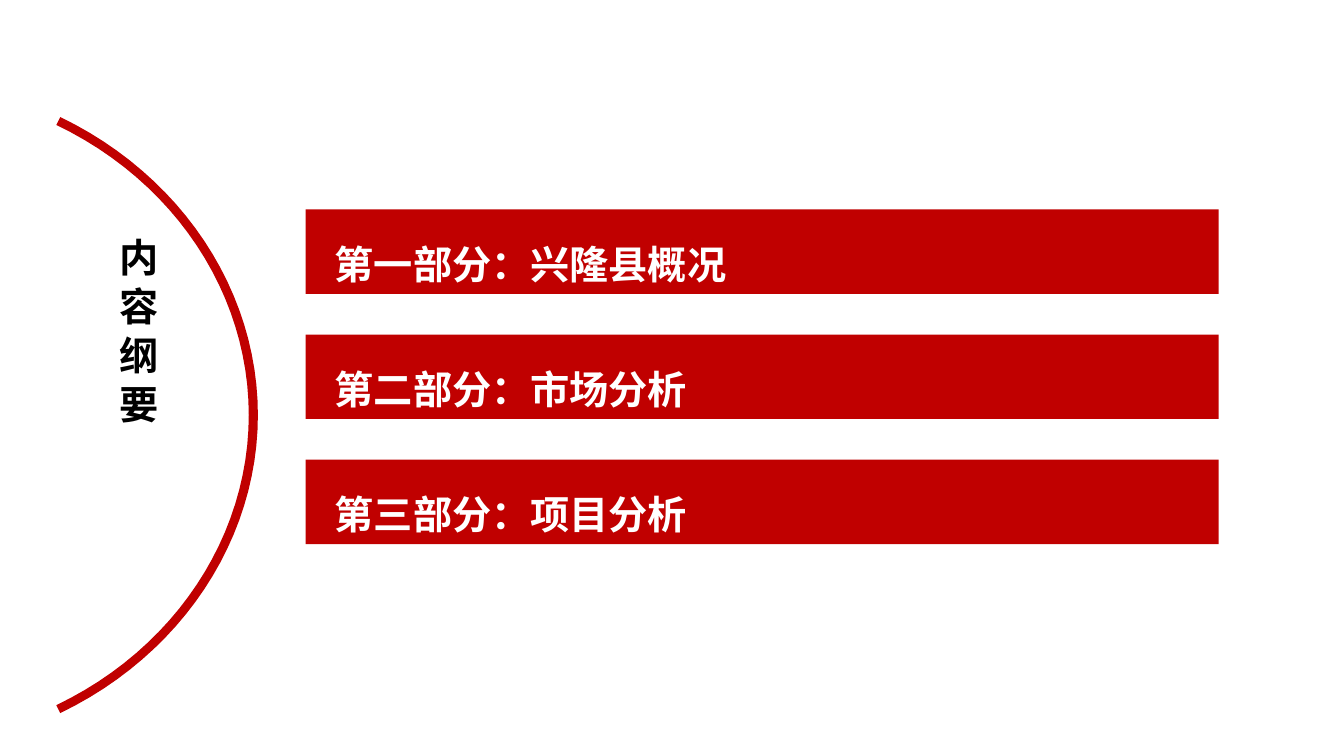
from dataclasses import dataclass

from lxml.etree import SubElement
from pptx import Presentation
from pptx.dml.color import RGBColor
from pptx.enum.shapes import MSO_SHAPE
from pptx.enum.text import MSO_ANCHOR, MSO_AUTO_SIZE, PP_ALIGN
from pptx.oxml.ns import qn
from pptx.util import Cm, Pt

COLOURS = {"red": "C00000", "white": "FFFFFF", "black": "000000"}
FONT = "Noto Sans CJK SC"

BAR_LEFT, BAR_TOP, BAR_WIDTH, BAR_HEIGHT = 7.7, 5.28, 23.01, 2.13
BAR_PITCH = 3.15

ARC_MIDDLE = 10.46
CURVE_STEPS = 24
# Control points of the upper half of each edge, in centimetres
INNER_EDGE = ((1.42, 3.15), (4.39, 4.57), (6.27, 7.39), (6.27, ARC_MIDDLE))
OUTER_EDGE = ((1.52, 2.95), (4.57, 4.42), (6.5, 7.32), (6.5, ARC_MIDDLE))


@dataclass
class Section:
    number: str
    topic: str

    @property
    def label(self) -> str:
        return f"第{self.number}部分：{self.topic}"


SECTIONS = [
    Section("一", "兴隆县概况"),
    Section("二", "市场分析"),
    Section("三", "项目分析"),
]


def colour(name: str) -> RGBColor:
    return RGBColor.from_string(COLOURS[name])


def paint(shape, fill: str) -> None:
    shape.shadow.inherit = False
    shape.fill.solid()
    shape.fill.fore_color.rgb = colour(fill)
    shape.line.fill.background()


def write(shape, text: str, *, ink: str, align=PP_ALIGN.LEFT, left_inset: float = 0.33,
          line_spacing: float = 1.0, size: int = 28) -> None:
    frame = shape.text_frame
    frame.word_wrap = True
    frame.auto_size = MSO_AUTO_SIZE.NONE
    frame.vertical_anchor = MSO_ANCHOR.MIDDLE
    frame.margin_left, frame.margin_right = Cm(left_inset), Cm(0.33)
    frame.margin_top = frame.margin_bottom = Cm(0.18)
    para = frame.paragraphs[0]
    para.alignment = align
    para.line_spacing = line_spacing
    para.space_before = Pt(0)
    span = para.add_run()
    span.text = text
    span.font.size = Pt(size)
    span.font.bold = True
    span.font.name = FONT
    span.font.color.rgb = colour(ink)
    SubElement(span.font._element, qn("a:ea"), typeface=FONT)


def edge_points(controls: tuple) -> list[tuple[int, int]]:
    """Sample a cubic curve and mirror it below the middle of the arc."""
    upper = []
    for step in range(CURVE_STEPS + 1):
        t = step / CURVE_STEPS
        weights = ((1 - t) ** 3, 3 * t * (1 - t) ** 2, 3 * t ** 2 * (1 - t), t ** 3)
        upper.append(tuple(sum(w * point[axis] for w, point in zip(weights, controls))
                           for axis in (0, 1)))
    lower = [(x, 2 * ARC_MIDDLE - y) for x, y in reversed(upper[:-1])]
    return [(Cm(x), Cm(y)) for x, y in upper + lower]


def draw_arc(page) -> None:
    outline = edge_points(INNER_EDGE) + edge_points(OUTER_EDGE)[::-1]
    builder = page.shapes.build_freeform(*outline[0])
    builder.add_line_segments(outline[1:], close=True)
    paint(builder.convert_to_shape(), "red")


def draw_title(page) -> None:
    title = page.shapes.title
    title.left, title.top, title.width, title.height = Cm(2.54), Cm(5.83), Cm(1.88), Cm(5.08)
    write(title, "内 容 纲 要", ink="black", align=PP_ALIGN.CENTER)
    title.text_frame._txBody.bodyPr.set("vert", "eaVert")


def draw_bar(page, section: Section, index: int) -> None:
    bar = page.shapes.add_shape(MSO_SHAPE.RECTANGLE, Cm(BAR_LEFT), Cm(BAR_TOP + index * BAR_PITCH),
                                Cm(BAR_WIDTH), Cm(BAR_HEIGHT))
    paint(bar, "red")
    write(bar, section.label, ink="white", left_inset=0.74, line_spacing=1.5)


def main() -> None:
    deck = Presentation()
    deck.slide_width, deck.slide_height = Cm(33.87), Cm(19.05)
    page = deck.slides.add_slide(deck.slide_layouts[5])
    draw_arc(page)
    draw_title(page)
    for index, section in enumerate(SECTIONS):
        draw_bar(page, section, index)
    deck.save("out.pptx")


if __name__ == "__main__":
    main()
